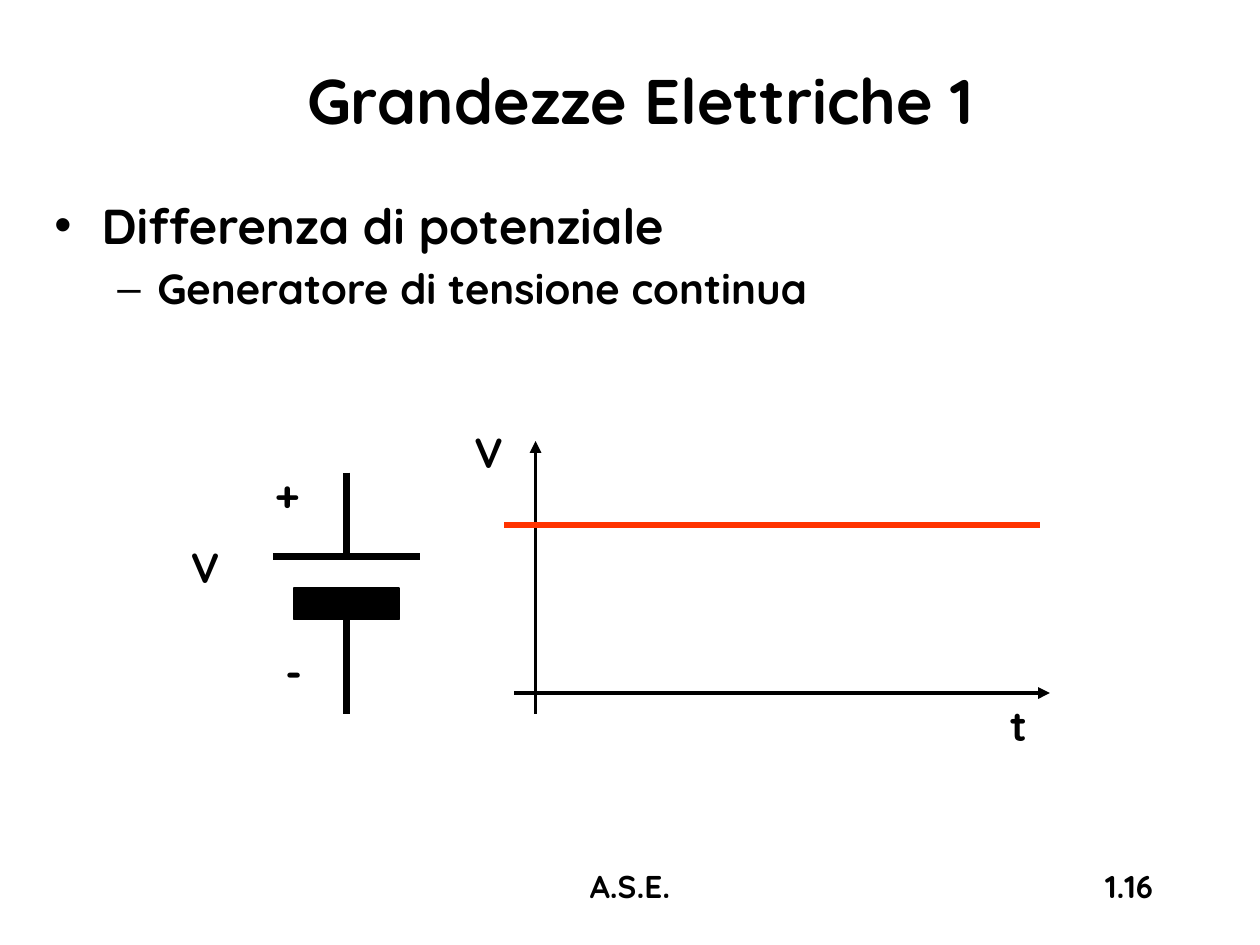
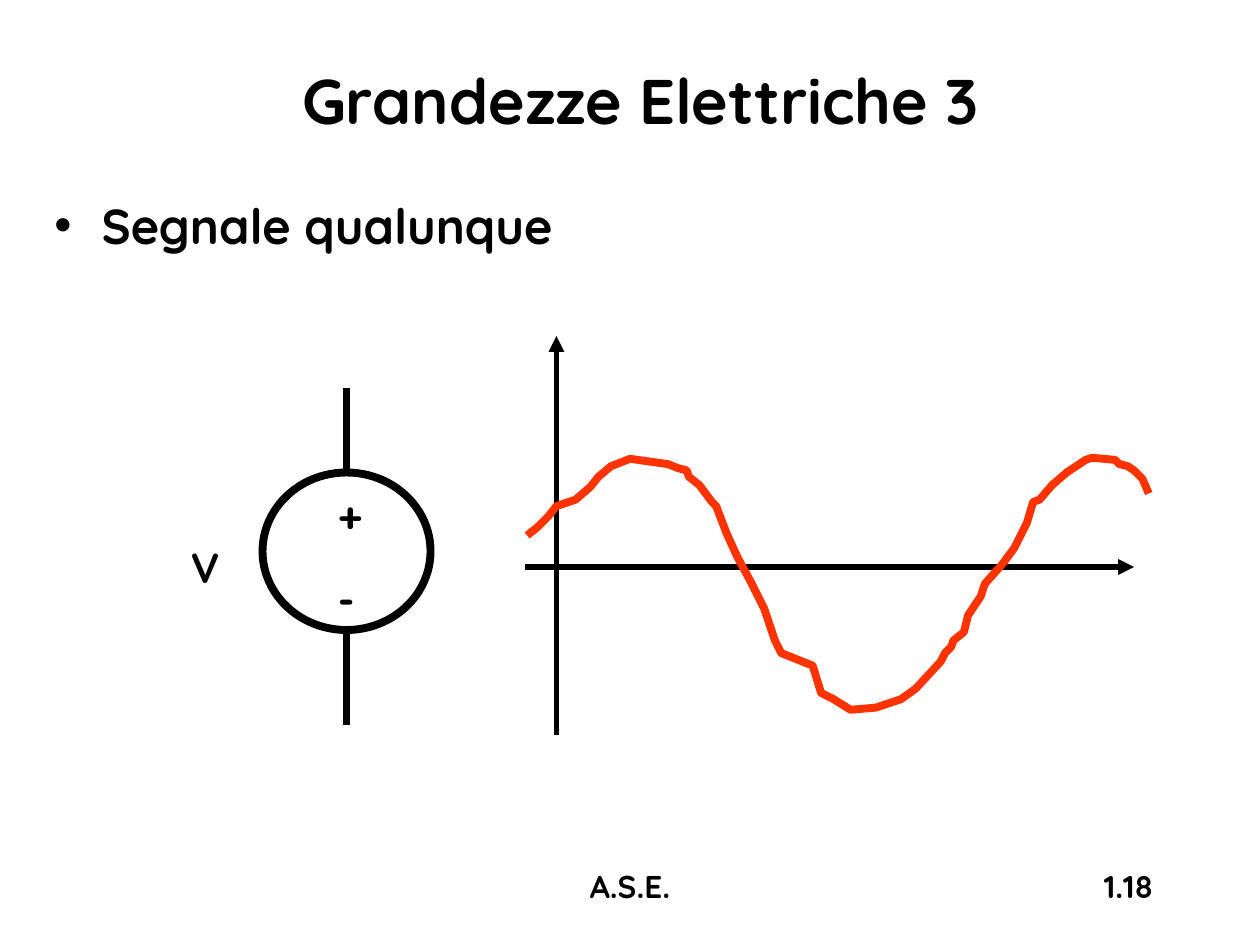
import pptx
import pptx.dml.color
import pptx.enum.shapes
import pptx.enum.text
import pptx.oxml
import pptx.oxml.ns
import pptx.util

PX = 7620  # 120 px to the inch
FONT = "Quicksand"
BLACK, RED = "000000", "FF3300"
ALIGN = pptx.enum.text.PP_ALIGN
ANCHOR = pptx.enum.text.MSO_ANCHOR
AUTO_SIZE = pptx.enum.text.MSO_AUTO_SIZE
SHAPE = pptx.enum.shapes.MSO_SHAPE
# level: (bullet, text size, left margin px, hanging indent px)
BULLETS = {0: ("•", 28, 45, 45), 1: ("–", 24, 98, 38)}

SIGNAL = [
    (502, 510), (512, 502), (522, 492), (530, 482), (542, 478), (548, 476),
    (562, 464), (570, 454), (582, 444), (600, 437), (636, 442), (646, 446),
    (654, 448), (656, 454), (666, 462), (678, 478), (682, 482), (692, 508),
    (702, 530), (716, 556), (728, 580), (738, 610), (744, 622), (774, 634),
    (782, 660), (794, 666), (810, 676), (834, 674), (852, 668), (858, 666),
    (872, 656), (896, 630), (900, 622), (906, 616), (908, 610), (918, 602),
    (922, 586), (934, 568), (938, 556), (954, 538), (966, 522), (978, 498),
    (984, 478), (990, 476), (1002, 462), (1016, 450), (1034, 438),
    (1040, 436), (1062, 438), (1066, 442), (1074, 444), (1080, 448),
    (1088, 456), (1094, 470),
]


def emu(*lengths):
    return [length * PX for length in lengths]


def rgb(colour):
    return pptx.dml.color.RGBColor.from_string(colour)


def xml(markup):
    head, rest = markup.split(" ", 1)
    return pptx.oxml.parse_xml(f"{head} {pptx.oxml.ns.nsdecls('a')} {rest}")


def write(para, text, size, align=ALIGN.LEFT):
    para.alignment = align
    span = para.add_run()
    span.text = text
    formats = {"name": FONT, "size": pptx.util.Pt(size), "bold": True}
    for name, value in formats.items():
        setattr(span.font, name, value)
    span.font.color.rgb = rgb(BLACK)


def set_outline(shape, colour, width):
    shape.line.color.rgb = rgb(colour)
    shape.line.width = pptx.util.Pt(width)


def add_text(page, area, text, size, align=ALIGN.LEFT):
    box = page.shapes.add_textbox(*emu(*area))
    box.text_frame.word_wrap = True
    write(box.text_frame.paragraphs[0], text, size, align)
    return box


def add_label(page, left, top, width, text):
    frame = add_text(page, (left, top, width, 60), text, 24).text_frame
    frame.word_wrap = False
    frame.auto_size = AUTO_SIZE.SHAPE_TO_FIT_TEXT


def add_bullets(page, items):
    """Write (level, text) items in the body area."""
    frame = page.shapes.add_textbox(*emu(40, 180, 1140, 620)).text_frame
    frame.word_wrap = True
    for index, (level, text) in enumerate(items):
        para = frame.add_paragraph() if index else frame.paragraphs[0]
        bullet, size, margin, hanging = BULLETS[level]
        para.level = level
        para.space_before = pptx.util.Pt(size * 0.2)
        write(para, text, size)
        settings = para._p.get_or_add_pPr()
        settings.set("marL", str(margin * PX))
        settings.set("indent", str(-hanging * PX))
        settings.append(xml('<a:buFont typeface="Arial"/>'))
        settings.append(xml(f'<a:buChar char="{bullet}"/>'))


def add_line(page, start, end, width, colour=BLACK, arrow=False):
    line = page.shapes.add_connector(
        pptx.enum.shapes.MSO_CONNECTOR.STRAIGHT, *emu(*start, *end))
    set_outline(line, colour, width)
    if arrow:
        line.line._get_or_add_ln().append(xml('<a:tailEnd type="triangle"/>'))
    line._element.spPr.append(xml("<a:effectLst />"))


def add_symbol(page, kind, area, width, fill=None):
    symbol = page.shapes.add_shape(kind, *emu(*area))
    symbol.shadow.inherit = False
    set_outline(symbol, BLACK, width)
    if fill:
        symbol.fill.solid()
        symbol.fill.fore_color.rgb = rgb(fill)
    else:
        symbol.fill.background()


def add_curve(page, points, width, colour):
    start, *rest = points
    builder = page.shapes.build_freeform(*start, scale=PX)
    builder.add_line_segments(rest, close=False)
    curve = builder.convert_to_shape()
    curve.shadow.inherit = False
    curve.fill.background()
    set_outline(curve, colour, width)


def add_page(deck, title, number, items):
    page = deck.slides.add_slide(deck.slide_layouts[5])
    heading = page.shapes.title
    area = emu(40, 20, 1140, 150)
    for name, value in zip(("left", "top", "width", "height"), area):
        setattr(heading, name, value)
    frame = heading.text_frame
    formats = {"vertical_anchor": ANCHOR.MIDDLE, "word_wrap": True,
               "auto_size": AUTO_SIZE.NONE}
    for name, value in formats.items():
        setattr(frame, name, value)
    write(frame.paragraphs[0], title, 36, ALIGN.CENTER)
    add_text(page, (410, 820, 380, 60), "A.S.E.", 18, ALIGN.CENTER)
    add_text(page, (860, 820, 250, 60), number, 18, ALIGN.RIGHT)
    add_bullets(page, items)
    return page


def add_source_labels(page, minus, plus):
    """Name the source V and mark its poles at two (left, top) places."""
    add_label(page, 170, 510, 52, "V")
    add_label(page, *minus, 37, "-")
    add_label(page, *plus, 48, "+")


def add_constant_voltage(deck):
    page = add_page(deck, "Grandezze Elettriche 1", "1.16", [
        (0, "Differenza di potenziale"),
        (1, "Generatore di tensione continua")])
    add_line(page, (330, 450), (330, 530), 4.5)
    add_line(page, (260, 530), (400, 530), 4.5)
    add_symbol(page, SHAPE.RECTANGLE, (280, 560, 100, 30), 0.75, BLACK)
    add_line(page, (330, 590), (330, 680), 4.5)
    add_source_labels(page, minus=(260, 610), plus=(250, 440))
    add_line(page, (510, 680), (510, 420), 2.25, arrow=True)
    add_line(page, (490, 660), (1000, 660), 2.25, arrow=True)
    add_line(page, (480, 500), (990, 500), 3, RED)
    add_label(page, 440, 400, 52, "V")
    add_label(page, 950, 660, 38, "t")


def add_generic_signal(deck):
    page = add_page(deck, "Grandezze Elettriche 3", "1.18",
                    [(0, "Segnale qualunque")])
    add_line(page, (330, 370), (330, 450), 4.5)
    add_line(page, (330, 600), (330, 690), 4.5)
    add_source_labels(page, minus=(310, 540), plus=(310, 460))
    add_symbol(page, SHAPE.OVAL, (250, 450, 160, 150), 4.5)
    add_line(page, (500, 540), (1080, 540), 3, arrow=True)
    add_line(page, (530, 700), (530, 320), 3, arrow=True)
    add_curve(page, SIGNAL, 4.5, RED)


def main():
    deck = pptx.Presentation()
    deck.slide_width, deck.slide_height = emu(1200, 900)
    add_constant_voltage(deck)
    add_generic_signal(deck)
    deck.save("out.pptx")


if __name__ == "__main__":
    main()
